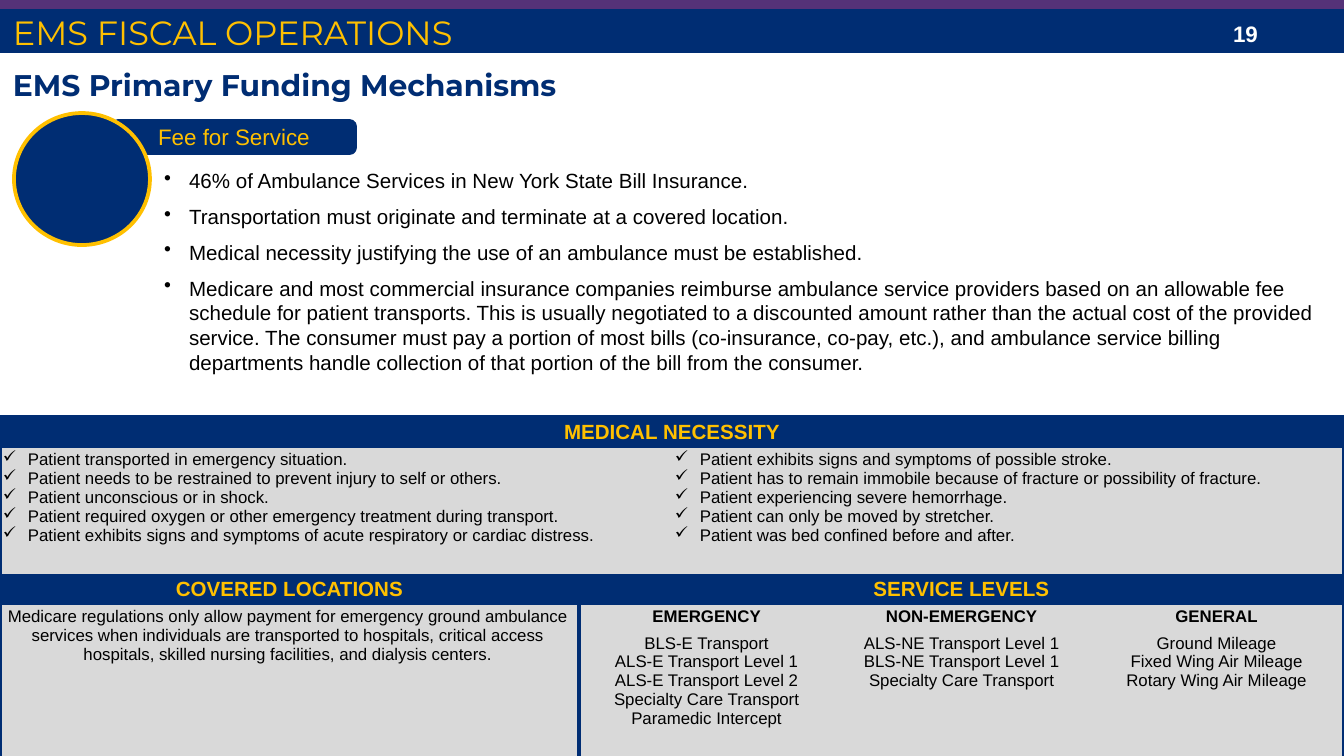
import pptx
import pptx.dml.color
import pptx.enum.shapes
import pptx.enum.text
import pptx.oxml
import pptx.oxml.ns
import pptx.util

PX = 914400 / 134.4
WIDTH, HEIGHT = 1344, 756
COLORS = {
    "navy": "002D73",
    "purple": "553278",
    "gold": "FFC000",
    "white": "FFFFFF",
    "black": "000000",
    "gray": "D9D9D9",
}
SHAPES = pptx.enum.shapes.MSO_SHAPE
ALIGN = pptx.enum.text.PP_ALIGN
ANCHOR = pptx.enum.text.MSO_ANCHOR
HEADER = dict(size=11, color="gold", bold=True, align=ALIGN.CENTER)
CENTERED = dict(size=9, align=ALIGN.CENTER)
CHECKED = dict(size=9, bullet="✓")

FUNDING = [
    "46% of Ambulance Services in New York State Bill Insurance.",
    "Transportation must originate and terminate at a covered location.",
    "Medical necessity justifying the use of an ambulance must be established.",
    "Medicare and most commercial insurance companies reimburse ambulance service "
    "providers based on an allowable fee schedule for patient transports. This is "
    "usually negotiated to a discounted amount rather than the actual cost of the "
    "provided service. The consumer must pay a portion of most bills (co-insurance, "
    "co-pay, etc.), and ambulance service billing departments handle collection of "
    "that portion of the bill from the consumer.",
]
NECESSITY = [
    [
        "Patient transported in emergency situation.",
        "Patient needs to be restrained to prevent injury to self or others.",
        "Patient unconscious or in shock.",
        "Patient required oxygen or other emergency treatment during transport.",
        "Patient exhibits signs and symptoms of acute respiratory or cardiac distress.",
    ],
    [
        "Patient exhibits signs and symptoms of possible stroke.",
        "Patient has to remain immobile because of fracture or possibility of fracture.",
        "Patient experiencing severe hemorrhage.",
        "Patient can only be moved by stretcher.",
        "Patient was bed confined before and after.",
    ],
]
LOCATIONS = (
    "Medicare regulations only allow payment for emergency ground ambulance services "
    "when individuals are transported to hospitals, critical access hospitals, "
    "skilled nursing facilities, and dialysis centers."
)
LEVELS = {
    "EMERGENCY": [
        "BLS-E Transport",
        "ALS-E Transport Level 1",
        "ALS-E Transport Level 2",
        "Specialty Care Transport",
        "Paramedic Intercept",
    ],
    "NON-EMERGENCY": [
        "ALS-NE Transport Level 1",
        "BLS-NE Transport Level 1",
        "Specialty Care Transport",
    ],
    "GENERAL": [
        "Ground Mileage",
        "Fixed Wing Air Mileage",
        "Rotary Wing Air Mileage",
    ],
}


def px(length):
    return pptx.util.Emu(round(length * PX))


def rgb(name):
    return pptx.dml.color.RGBColor.from_string(COLORS[name])


def add_bullet(para, mark, indent=25):
    properties = para._p.get_or_add_pPr()
    properties.set("marL", str(px(indent)))
    properties.set("indent", str(-px(indent)))
    bullet = pptx.oxml.parse_xml(f'<a:buChar {pptx.oxml.ns.nsdecls("a")} char="{mark}"/>')
    properties.append(bullet)


def write(frame, lines, size=12, font="Arial", color="black", bold=False,
          align=ALIGN.LEFT, bullet=None, gap=0):
    for index, line in enumerate(lines):
        para = frame.add_paragraph() if index else frame.paragraphs[0]
        para.alignment = align
        if bullet:
            add_bullet(para, bullet)
        para.space_before = pptx.util.Pt(gap if index else 0)
        para.space_after = pptx.util.Pt(gap)
        span = para.add_run()
        span.text = line
        span.font.name = font
        span.font.size = pptx.util.Pt(size)
        span.font.bold = bold
        span.font.color.rgb = rgb(color)


def add_text(page, place, lines, top=7, bottom=7, anchor=ANCHOR.TOP, **style):
    frame = page.shapes.add_textbox(*map(px, place)).text_frame
    frame.word_wrap = True
    frame.margin_left = frame.margin_right = px(13)
    frame.margin_top, frame.margin_bottom = px(top), px(bottom)
    frame.vertical_anchor = anchor
    write(frame, lines, **style)


def add_block(page, kind, place, fill, line=None):
    shape = page.shapes.add_shape(kind, *map(px, place))
    shape.shadow.inherit = False
    shape.fill.solid()
    shape.fill.fore_color.rgb = rgb(fill)
    if line:
        shape.line.color.rgb = rgb(line)
        shape.line.width = pptx.util.Pt(2)
    else:
        shape.line.fill.background()
    return shape


def set_borders(cell, sides):
    for side in "LRTB":
        if side in sides:
            paint = f'<a:solidFill><a:srgbClr val="{COLORS["navy"]}"/></a:solidFill>'
        else:
            paint = "<a:noFill/>"
        border = pptx.oxml.parse_xml(
            f'<a:ln{side} {pptx.oxml.ns.nsdecls("a")} w="{pptx.util.Pt(2.25)}">{paint}</a:ln{side}>')
        cell._tc.get_or_add_tcPr().append(border)


def add_grid(page, top, columns, rows, divider=0):
    place = map(px, (0, top, sum(columns), sum(rows)))
    table = page.shapes.add_table(len(rows), len(columns), *place).table
    for column, width in zip(table.columns, columns):
        column.width = px(width)
    for row, height in zip(table.rows, rows):
        row.height = px(height)
    last_row, last_column = len(rows) - 1, len(columns) - 1
    for r in range(len(rows)):
        for c in range(len(columns)):
            cell = table.cell(r, c)
            divided = divider and r > 0
            edges = {
                "L": c == 0 or (divided and c == divider),
                "R": c == last_column or (divided and c == divider - 1),
                "T": r == 0,
                "B": r == last_row,
            }
            set_borders(cell, [side for side, drawn in edges.items() if drawn])
            cell.fill.solid()
            cell.fill.fore_color.rgb = rgb("gray" if r else "navy")
            cell.margin_left = cell.margin_right = px(3)
            cell.margin_top = cell.margin_bottom = px(3)
            cell.vertical_anchor = ANCHOR.TOP if r else ANCHOR.MIDDLE
    return table


def add_necessity(page):
    table = add_grid(page, 417, [672, 672], [29, 128])
    table.cell(0, 0).merge(table.cell(0, 1))
    write(table.cell(0, 0).text_frame, ["MEDICAL NECESSITY"], **HEADER)
    for column, lines in enumerate(NECESSITY):
        write(table.cell(1, column).text_frame, lines, **CHECKED)


def add_coverage(page):
    table = add_grid(page, 574, [579, 255, 255, 255], [29, 25, 128], divider=1)
    table.cell(0, 1).merge(table.cell(0, 3))
    table.cell(1, 0).merge(table.cell(2, 0))
    table.cell(1, 0).margin_right = px(7)
    write(table.cell(0, 0).text_frame, ["COVERED LOCATIONS"], **HEADER)
    write(table.cell(0, 1).text_frame, ["SERVICE LEVELS"], **HEADER)
    write(table.cell(1, 0).text_frame, [LOCATIONS], **CENTERED)
    for column, (level, services) in enumerate(LEVELS.items(), start=1):
        write(table.cell(1, column).text_frame, [level], bold=True, **CENTERED)
        write(table.cell(2, column).text_frame, services, **CENTERED)


def main():
    deck = pptx.Presentation()
    deck.slide_width, deck.slide_height = px(WIDTH), px(HEIGHT)
    page = deck.slides.add_slide(deck.slide_layouts[6])

    add_block(page, SHAPES.RECTANGLE, (0, 9, WIDTH, 44), "navy")
    add_block(page, SHAPES.RECTANGLE, (0, -3, WIDTH, 12), "purple")
    add_text(page, (1220, 13, 101, 40), ["19"], color="white", bold=True)
    add_text(page, (0, 12, WIDTH, 40), ["EMS FISCAL OPERATIONS"], top=0, bottom=0,
             anchor=ANCHOR.BOTTOM, size=18, font="Montserrat", color="gold")
    add_text(page, (0, 54, WIDTH, 50), ["EMS Primary Funding Mechanisms"], top=13,
             bottom=0, size=16, font="Montserrat", color="navy", bold=True)

    add_coverage(page)
    add_necessity(page)

    label = add_block(page, SHAPES.ROUNDED_RECTANGLE, (113, 121, 242, 32), "navy", "navy")
    label.text_frame.vertical_anchor = ANCHOR.MIDDLE
    write(label.text_frame, ["Fee for Service"], color="gold", align=ALIGN.CENTER)
    add_block(page, SHAPES.OVAL, (14, 113, 136, 132), "navy", "gold")
    add_text(page, (151, 161, 1180, 222), FUNDING, size=11, bullet="•", gap=3)

    deck.save("out.pptx")


if __name__ == "__main__":
    main()
